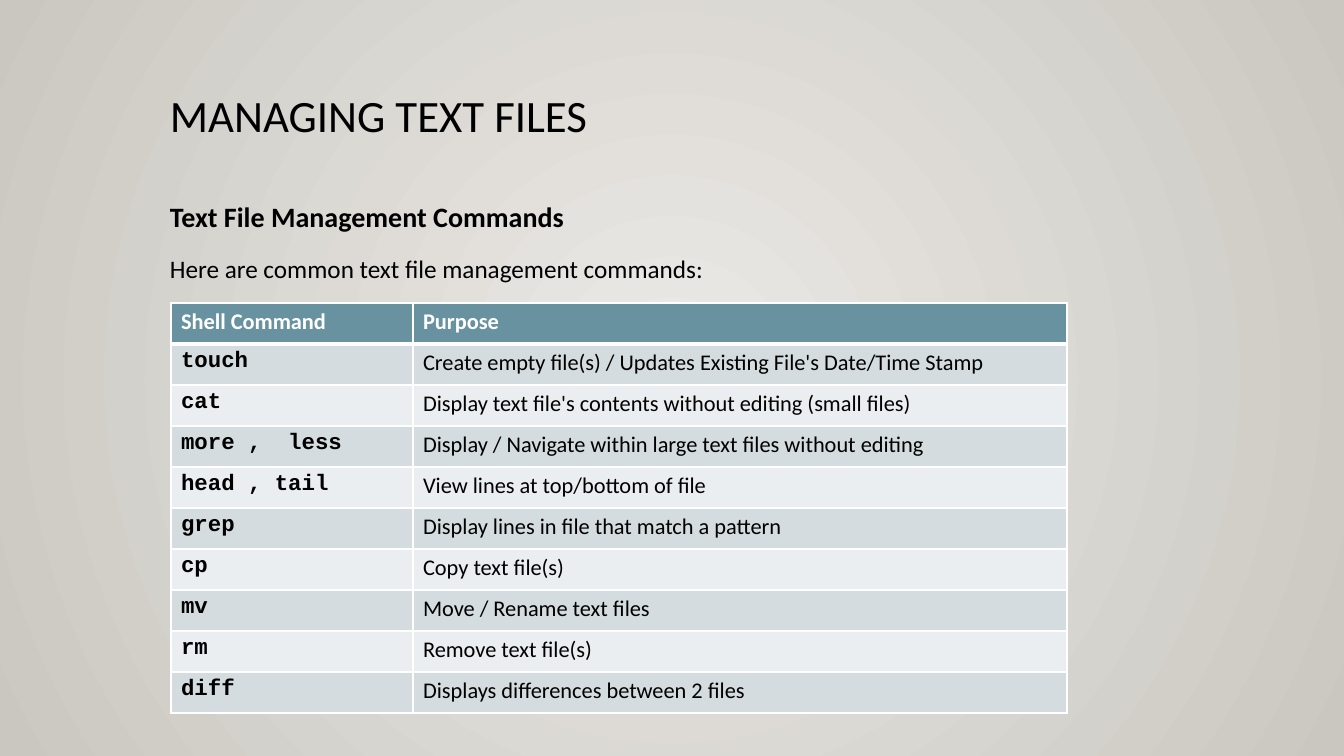
from dataclasses import dataclass
from typing import Any, NamedTuple

from lxml.etree import SubElement
from pptx import Presentation
from pptx.dml.color import RGBColor
from pptx.enum.text import MSO_ANCHOR
from pptx.oxml import parse_xml
from pptx.oxml.ns import nsdecls, qn
from pptx.util import Emu, Pt

SCALE = 914400 / 100.8


@dataclass(frozen=True)
class Theme:
    black: str = "000000"
    white: str = "FFFFFF"
    teal: str = "6892A0"
    bands: tuple[str, str] = ("D4DCDF", "EBEEF0")
    back: tuple[str, str] = ("ECEAE7", "CAC7C1")
    sans: str = "Calibri"
    mono: str = "Courier New"
    title: int = 32
    head: int = 20
    body: int = 18
    cell: int = 16
    thin: int = 1
    thick: int = 3


THEME = Theme()


class Line(NamedTuple):
    text: str
    size: int
    bold: bool = False


class Block(NamedTuple):
    left: int
    top: int
    width: int
    height: int
    spacing: float
    gap: int
    lines: list[Line]


class Row(NamedTuple):
    command: str
    purpose: str


BLOCKS = [
    Block(160, 89, 1058, 116, 0.9, 0, [Line("MANAGING TEXT FILES", THEME.title)]),
    Block(160, 188, 917, 524, 1.2, 10, [
        Line("Text File Management Commands", THEME.head, True),
        Line("Here are common text file management commands:", THEME.body),
    ]),
]

ROWS = [
    Row("Shell Command", "Purpose"),
    Row("touch", "Create empty file(s) / Updates Existing File's Date/Time Stamp"),
    Row("cat", "Display text file's contents without editing (small files)"),
    Row("more ,  less", "Display / Navigate within large text files without editing"),
    Row("head , tail", "View lines at top/bottom of file"),
    Row("grep", "Display lines in file that match a pattern"),
    Row("cp", "Copy text file(s)"),
    Row("mv", "Move / Rename text files"),
    Row("rm", "Remove text file(s)"),
    Row("diff", "Displays differences between 2 files"),
]
LEFT, TOP, PITCH = 171, 303, 41
WIDTHS = (242, 654)


def px(count: int) -> Emu:
    return Emu(round(count * SCALE))


def style(font: Any, color: str, **values: Any) -> None:
    for name, value in values.items():
        setattr(font, name, value)
    font.color.rgb = RGBColor.from_string(color)


def paint(slide: Any) -> None:
    """Fill the background with a gradient spreading from the centre."""
    fill = slide.background.fill
    fill.gradient()
    for stop, color in zip(fill.gradient_stops, THEME.back):
        stop.color.rgb = RGBColor.from_string(color)
    line = next(slide.background._cSld.iter(qn("a:lin")))
    line.getparent().replace(line, parse_xml(
        f'<a:path {nsdecls("a")} path="circle">'
        '<a:fillToRect l="50000" t="50000" r="50000" b="50000"/></a:path>'))


def write(slide: Any, block: Block) -> None:
    box = slide.shapes.add_textbox(*map(px, block[:4]))
    frame = box.text_frame
    frame.word_wrap = True
    frame.vertical_anchor = MSO_ANCHOR.TOP
    for index, line in enumerate(block.lines):
        para = frame.add_paragraph() if index else frame.paragraphs[0]
        para.line_spacing = block.spacing
        para.space_before = Pt(block.gap if index else 0)
        run = para.add_run()
        run.text = line.text
        style(run.font, THEME.black, name=THEME.sans, size=Pt(line.size), bold=line.bold)


def border(cell: Any, row: int) -> None:
    """Draw white edges, with a thick one between header and body."""
    props = cell._tc.get_or_add_tcPr()
    heavy = {(0, "B"), (1, "T")}
    for index, side in enumerate("LRTB"):
        width = THEME.thick if (row, side) in heavy else THEME.thin
        edge = SubElement(props, qn(f"a:ln{side}"), w=str(Pt(width)))
        fill = SubElement(edge, qn("a:solidFill"))
        SubElement(fill, qn("a:srgbClr"), val=THEME.white)
        props.insert(index, edge)


def tabulate(slide: Any) -> None:
    table = slide.shapes.add_table(
        len(ROWS), len(WIDTHS), px(LEFT), px(TOP),
        px(sum(WIDTHS)), px(PITCH * len(ROWS))).table
    for column, width in zip(table.columns, WIDTHS):
        column.width = px(width)
    for r, row in enumerate(ROWS):
        table.rows[r].height = px(PITCH)
        for c, text in enumerate(row):
            cell = table.cell(r, c)
            cell.fill.solid()
            shade = THEME.bands[(r - 1) % 2] if r else THEME.teal
            cell.fill.fore_color.rgb = RGBColor.from_string(shade)
            border(cell, r)
            run = cell.text_frame.paragraphs[0].add_run()
            run.text = text
            style(run.font, THEME.black if r else THEME.white,
                  name=THEME.mono if r and c == 0 else THEME.sans,
                  size=Pt(THEME.cell), bold=r == 0 or c == 0)


def main() -> None:
    deck = Presentation()
    deck.slide_width, deck.slide_height = px(1344), px(756)
    slide = deck.slides.add_slide(deck.slide_layouts[6])
    paint(slide)
    for block in BLOCKS:
        write(slide, block)
    tabulate(slide)
    deck.save("out.pptx")


if __name__ == "__main__":
    main()
